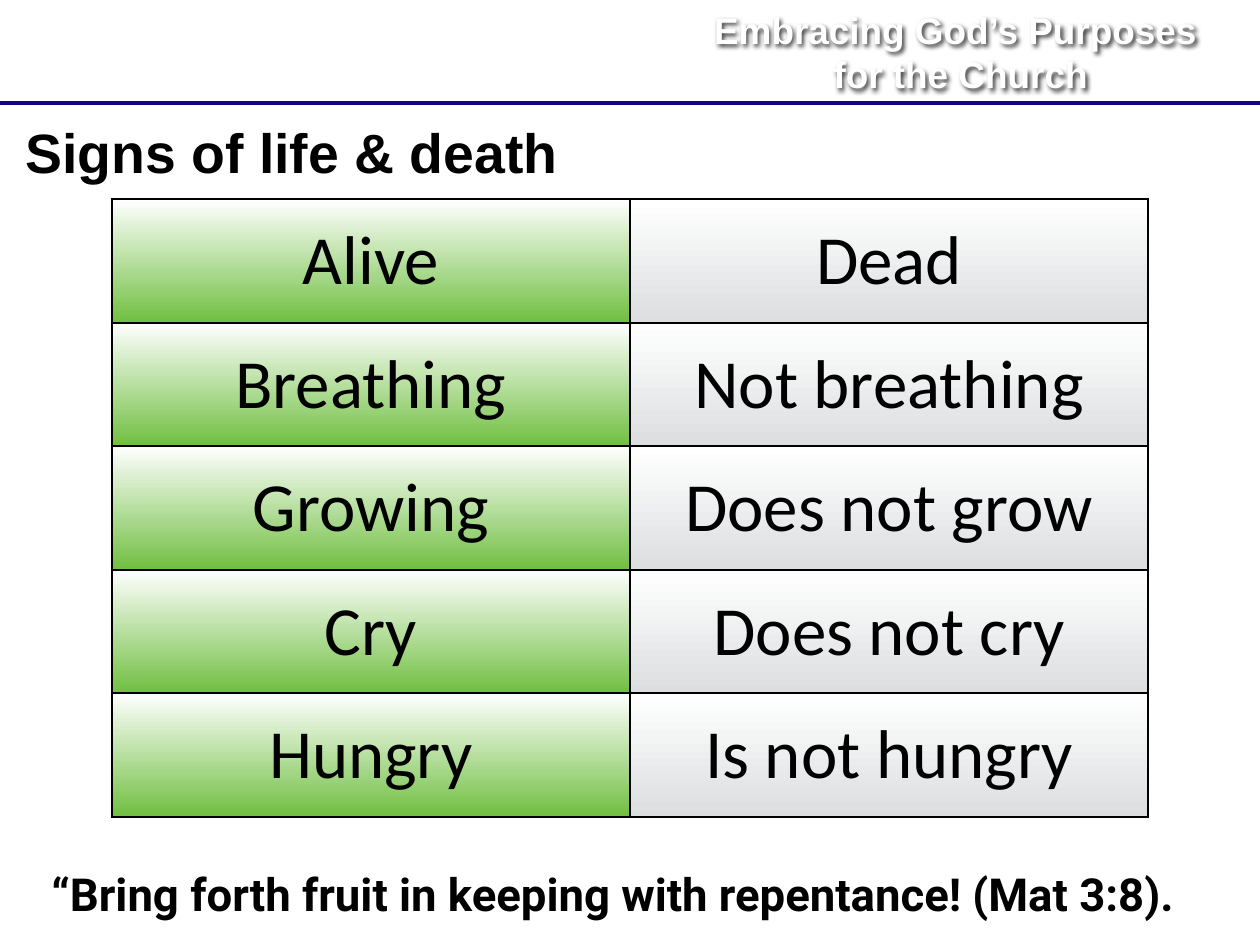
from lxml import etree
from pptx import Presentation
from pptx.dml.color import RGBColor
from pptx.enum.shapes import MSO_CONNECTOR
from pptx.enum.text import MSO_ANCHOR, MSO_AUTO_SIZE, PP_ALIGN
from pptx.oxml.ns import qn
from pptx.util import Inches, Pt

TOP, MIDDLE = MSO_ANCHOR.TOP, MSO_ANCHOR.MIDDLE
LEFT, CENTER = PP_ALIGN.LEFT, PP_ALIGN.CENTER
GROW = MSO_AUTO_SIZE.SHAPE_TO_FIT_TEXT
STRAIGHT = MSO_CONNECTOR.STRAIGHT

COLORS = {
    "rule": "11008E",
    "text": "000000",
    "white": "FFFFFF",
    "alive": "70BF41",
    "dead": "DCDEE0",
}
INSET = Inches(0.06)

SIGNS = [
    ("Alive", "Dead"),
    ("Breathing", "Not breathing"),
    ("Growing", "Does not grow"),
    ("Cry", "Does not cry"),
    ("Hungry", "Is not hungry"),
]


def rgb(name):
    return RGBColor.from_string(COLORS[name])


class SlideBuilder:
    """Places elements by percent of the slide's width and height."""

    def __init__(self, presentation):
        self.width = presentation.slide_width
        self.height = presentation.slide_height
        self.slide = presentation.slides.add_slide(presentation.slide_layouts[6])

    def x(self, percent):
        return round(self.width * percent / 100)

    def y(self, percent):
        return round(self.height * percent / 100)

    def place(self, left, top, width, height):
        return self.x(left), self.y(top), self.x(width), self.y(height)

    def rule(self, start, end, top, color, weight):
        connector = self.slide.shapes.add_connector(
            STRAIGHT, self.x(start), self.y(top), self.x(end), self.y(top))
        connector.line.color.rgb = rgb(color)
        connector.line.width = Pt(weight)
        etree.SubElement(connector._element.spPr, qn("a:effectLst"))

    def add_run(self, paragraph, text, font_name, size, color="text", bold=False):
        run = paragraph.add_run()
        run.text = text
        run.font.name = font_name
        run.font.size = Pt(size)
        run.font.bold = bold
        run.font.color.rgb = rgb(color)

    def add_text_shadow(self, shape):
        effects = etree.SubElement(shape._element.spPr, qn("a:effectLst"))
        shadow = etree.SubElement(effects, qn("a:outerShdw"), blurRad=str(Pt(4)),
                                  dist=str(Pt(2)), dir="2700000", rotWithShape="0")
        shade = etree.SubElement(shadow, qn("a:srgbClr"), val=COLORS["text"])
        etree.SubElement(shade, qn("a:alpha"), val="75000")

    def text(self, place, lines, font_name, size, color="text", align=LEFT,
             anchor=MIDDLE, grow=False, spacing=None, shadow=False):
        shape = self.slide.shapes.add_textbox(*self.place(*place))
        frame = shape.text_frame
        frame.word_wrap = True
        frame.vertical_anchor = anchor
        frame.margin_left = frame.margin_right = INSET
        frame.margin_top = frame.margin_bottom = INSET
        if grow:
            frame.auto_size = GROW
        if shadow:
            self.add_text_shadow(shape)
        paragraph = frame.paragraphs[0]
        paragraph.alignment = align
        if spacing:
            paragraph.line_spacing = Pt(spacing)
        for index, line in enumerate(lines):
            if index:
                paragraph.add_line_break()
            self.add_run(paragraph, line, font_name, size, color, bold=True)

    def table(self, place, rows, column_colors, font_name, size):
        table = self.slide.shapes.add_table(
            len(rows), len(column_colors), *self.place(*place)).table
        table.first_row = table.horz_banding = False
        for row_index, row in enumerate(rows):
            for column_index, text in enumerate(row):
                cell = table.cell(row_index, column_index)
                self.style_cell(cell, column_colors[column_index])
                paragraph = cell.text_frame.paragraphs[0]
                paragraph.alignment = CENTER
                self.add_run(paragraph, text, font_name, size)

    def style_cell(self, cell, color):
        cell.vertical_anchor = MIDDLE
        cell.margin_left = cell.margin_right = INSET
        cell.margin_top = cell.margin_bottom = INSET
        cell.fill.gradient()
        cell.fill.gradient_angle = 270
        for stop, position, name in zip(cell.fill.gradient_stops, (0, 1), ("white", color)):
            stop.position = position
            stop.color.rgb = rgb(name)
        properties = cell._tc.get_or_add_tcPr()
        for index, side in enumerate(("lnL", "lnR", "lnT", "lnB")):
            border = etree.Element(qn(f"a:{side}"), w=str(Pt(2)))
            fill = etree.SubElement(border, qn("a:solidFill"))
            etree.SubElement(fill, qn("a:srgbClr"), val=COLORS["text"])
            properties.insert(index, border)


def main():
    presentation = Presentation()
    presentation.slide_width = Inches(14.22)
    presentation.slide_height = Inches(10.67)
    builder = SlideBuilder(presentation)

    # Header band
    builder.rule(0, 100, 10.92, "rule", 3)
    builder.text((52.5, 0.28, 47.5, 10.4),
                 ["Embracing God’s Purposes ", "for the Church"],
                 "Arial", 30, color="white", align=CENTER, grow=True, shadow=True)

    # Title
    builder.text((1.62, 11.95, 91.63, 10.12), ["Signs of life & death"],
                 "Arial", 45, anchor=TOP)

    # Comparison table
    builder.table((8.86, 21.09, 82.28, 65.36), SIGNS, ("alive", "dead"), "Calibri", 56)

    # Closing verse
    builder.text((3.66, 89.97, 96.34, 6.75),
                 ["“Bring forth fruit in keeping with repentance! (Mat 3:8)."],
                 "Roboto", 37, grow=True, spacing=62)

    presentation.save("out.pptx")


if __name__ == "__main__":
    main()
